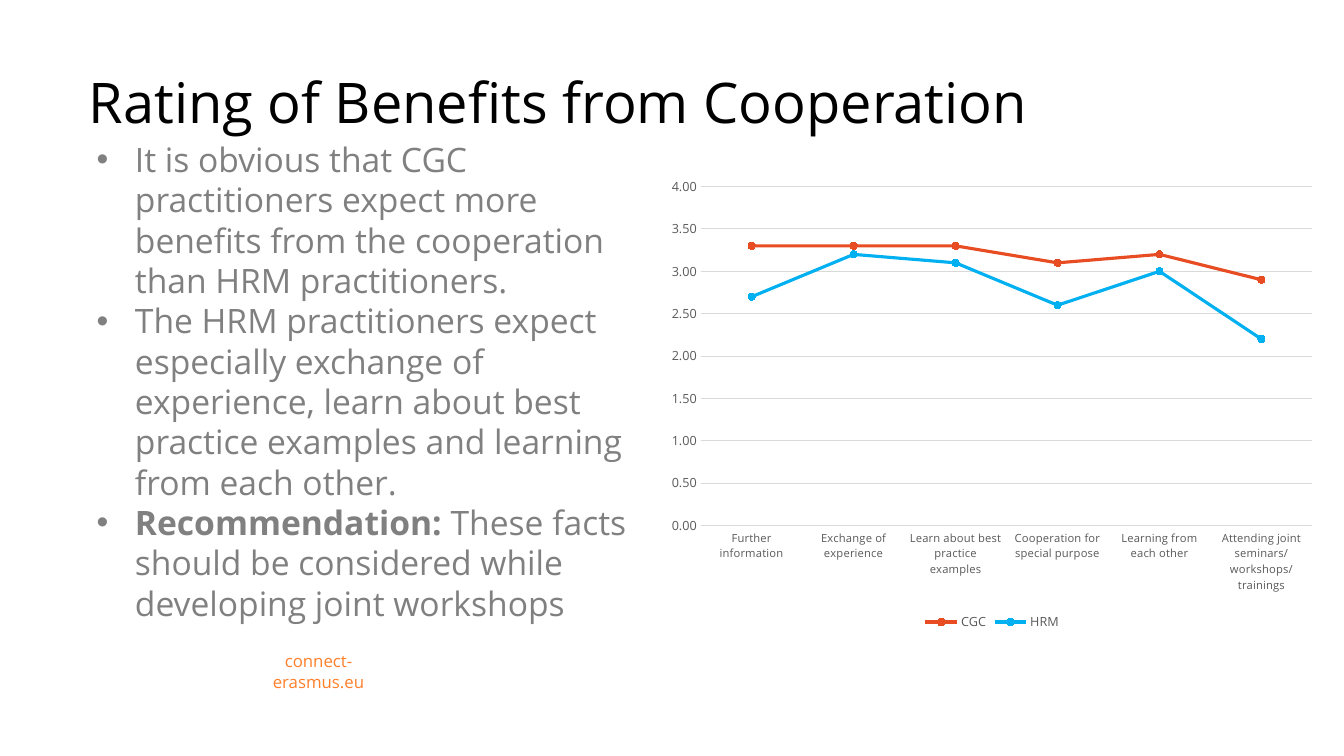
from dataclasses import dataclass
from lxml.etree import SubElement
from pptx import Presentation
from pptx.chart.data import CategoryChartData
from pptx.dml.color import RGBColor
from pptx.enum.chart import XL_CHART_TYPE, XL_LEGEND_POSITION, XL_MARKER_STYLE, XL_TICK_MARK
from pptx.enum.text import MSO_ANCHOR, MSO_AUTO_SIZE, PP_ALIGN
from pptx.oxml.ns import qn
from pptx.util import Inches, Pt


@dataclass(frozen=True)
class Theme:
    face: str = "Open Sans"
    black: str = "000000"
    body: str = "808080"
    site: str = "FF7F2A"
    label: str = "595959"
    grid: str = "D9D9D9"
    cgc: str = "E84C22"
    hrm: str = "00B0F0"
    title_size: float = 40
    body_size: float = 24
    site_size: float = 12
    chart_size: float = 10
    value_size: float = 9
    category_size: float = 8


theme = Theme()


def set_font(font, size, color):
    font.name = theme.face
    font.size = Pt(size)
    font.color.rgb = RGBColor.from_string(color)


def set_line(line, color, width):
    line.color.rgb = RGBColor.from_string(color)
    line.width = Pt(width)


deck = Presentation()
deck.slide_width = Inches(13.33)
deck.slide_height = Inches(7.5)
page = deck.slides.add_slide(deck.slide_layouts[5])

title = page.shapes.title
title.left, title.top = Inches(0.78), Inches(-0.2)
title.width, title.height = Inches(11.69), Inches(1.6)
title.text_frame.text = "Rating of Benefits from Cooperation"
title.text_frame.auto_size = MSO_AUTO_SIZE.NONE
title.text_frame.vertical_anchor = MSO_ANCHOR.BOTTOM
para = title.text_frame.paragraphs[0]
para.alignment = PP_ALIGN.LEFT
para.line_spacing = 0.9
set_font(para.font, theme.title_size, theme.black)

findings = [
    ("", "It is obvious that CGC practitioners expect more benefits from the "
         "cooperation than HRM practitioners."),
    ("", "The HRM practitioners expect especially exchange of experience, learn about "
         "best practice examples and learning from each other."),
    ("Recommendation: ", "These facts should be considered while developing joint workshops"),
]
findings_box = page.shapes.add_textbox(Inches(0.86), Inches(1.33), Inches(5.48), Inches(4.84))
frame = findings_box.text_frame
frame.word_wrap = True
for index, (lead, statement) in enumerate(findings):
    para = frame.paragraphs[0] if index == 0 else frame.add_paragraph()
    para.line_spacing = 1.0
    properties = para._p.get_or_add_pPr()
    properties.set("marL", str(Inches(0.38)))
    properties.set("indent", str(Inches(-0.38)))
    SubElement(properties, qn("a:buFont")).set("typeface", "Arial")
    SubElement(properties, qn("a:buChar")).set("char", "•")
    set_font(para.font, theme.body_size, theme.body)
    if lead:
        span = para.add_run()
        span.text = lead
        span.font.bold = True
    para.add_run().text = statement

site_box = page.shapes.add_textbox(Inches(2.28), Inches(6.51), Inches(1.76), Inches(0.3))
frame = site_box.text_frame
frame.word_wrap = True
frame.margin_left = frame.margin_right = Inches(0.2)
frame.vertical_anchor = MSO_ANCHOR.MIDDLE
para = frame.paragraphs[0]
para.text = "connect-erasmus.eu"
para.alignment = PP_ALIGN.CENTER
set_font(para.font, theme.site_size, theme.site)

ratings = CategoryChartData(number_format="###0.00")
ratings.categories = [
    "Further information",
    "Exchange of experience",
    "Learn about best practice examples",
    "Cooperation for special purpose",
    "Learning from each other",
    "Attending joint seminars/workshops/trainings",
]
ratings.add_series("CGC", [3.3, 3.3, 3.3, 3.1, 3.2, 2.9])
ratings.add_series("HRM", [2.7, 3.2, 3.1, 2.6, 3, 2.2])
chart = page.shapes.add_chart(
    XL_CHART_TYPE.LINE_MARKERS, Inches(6.53), Inches(1.67), Inches(6.62), Inches(4.63), ratings
).chart
chart.has_title = False
set_font(chart.font, theme.chart_size, theme.black)
chart.has_legend = True
chart.legend.position = XL_LEGEND_POSITION.BOTTOM
chart.legend.include_in_layout = False
set_font(chart.legend.font, theme.value_size, theme.label)

category_axis, value_axis = chart.category_axis, chart.value_axis
for axis, size in ((category_axis, theme.category_size), (value_axis, theme.value_size)):
    axis.major_tick_mark = axis.minor_tick_mark = XL_TICK_MARK.NONE
    set_font(axis.tick_labels.font, size, theme.label)
set_line(category_axis.format.line, theme.grid, 0.75)
value_axis.format.line.fill.background()
value_axis.minimum_scale, value_axis.maximum_scale = 0, 4
value_axis.major_unit = 0.5
value_axis.has_major_gridlines = True
set_line(value_axis.major_gridlines.format.line, theme.grid, 0.75)
value_axis.tick_labels.number_format = "###0.00"
value_axis.tick_labels.number_format_is_linked = False

plot = chart.plots[0]
plot.vary_by_categories = False
for series, color in zip(plot.series, (theme.cgc, theme.hrm)):
    series.smooth = False
    set_line(series.format.line, color, 2.25)
    series.marker.style = XL_MARKER_STYLE.CIRCLE
    series.marker.size = 5
    series.marker.format.fill.solid()
    series.marker.format.fill.fore_color.rgb = RGBColor.from_string(color)
    set_line(series.marker.format.line, color, 0.75)

deck.save("out.pptx")
